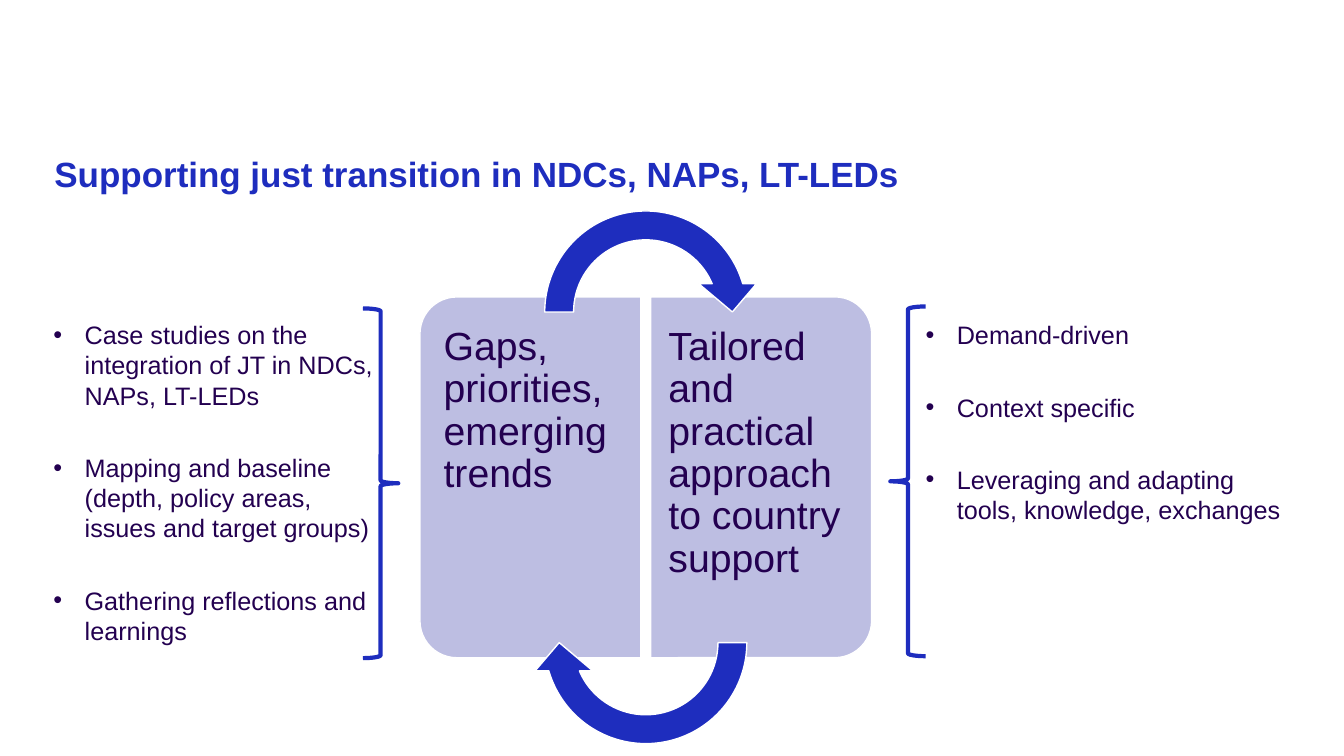
from lxml import etree
from pptx import Presentation
from pptx.dml.color import RGBColor
from pptx.enum.shapes import MSO_SHAPE
from pptx.enum.text import MSO_ANCHOR, PP_ALIGN
from pptx.oxml.ns import qn
from pptx.util import Pt

PANEL = MSO_SHAPE.ROUND_2_SAME_RECTANGLE
ARROW = MSO_SHAPE.CIRCULAR_ARROW
BRACE = MSO_SHAPE.RIGHT_BRACE
TOP = MSO_ANCHOR.TOP
LEFT = PP_ALIGN.LEFT

BLUE = RGBColor(0x1E, 0x2D, 0xBE)
LILAC = RGBColor(0xBD, 0xBE, 0xE2)
PLUM = RGBColor(0x23, 0x00, 0x50)
WHITE = RGBColor(0xFF, 0xFF, 0xFF)
PX = 9144  # 100 px to the inch

deck = Presentation()
deck.slide_width, deck.slide_height = 1333 * PX, 750 * PX
slide = deck.slides.add_slide(deck.slide_layouts[6])


def add_text(box, lines, size, color, pads=(0, 0, 0, 0), bold=False, space=None, bullet=False):
    area = slide.shapes.add_textbox(*[n * PX for n in box])
    frame = area.text_frame
    frame.word_wrap = True
    frame.vertical_anchor = TOP
    frame.margin_left, frame.margin_top, frame.margin_right, frame.margin_bottom = [
        n * PX for n in pads]
    for i, line in enumerate(lines):
        para = frame.paragraphs[0] if i == 0 else frame.add_paragraph()
        para.alignment = LEFT
        if space:
            para.line_spacing = space
        if bullet:
            para.space_before = Pt(24 if i else 0)
            para.space_after = Pt(6)
            props = para._p.get_or_add_pPr()
            props.set("marL", str(31 * PX))
            props.set("indent", str(-31 * PX))
            etree.SubElement(props, qn("a:buFont")).set("typeface", "Arial")
            etree.SubElement(props, qn("a:buChar")).set("char", "•")
        run = para.add_run()
        run.text = line
        run.font.name, run.font.size, run.font.bold = "Arial", Pt(size), bold
        run.font.color.rgb = color


def add_shape(kind, box, turn, fill, line, width, adjust=()):
    shape = slide.shapes.add_shape(kind, *[n * PX for n in box])
    shape.shadow.inherit = False
    shape.rotation = turn
    if fill is None:
        shape.fill.background()
    else:
        shape.fill.solid()
        shape.fill.fore_color.rgb = fill
    shape.line.color.rgb = line
    shape.line.width = Pt(width)
    for i, value in enumerate(adjust):
        shape.adjustments[i] = value


# Title
add_text((54, 156, 1226, 79), ["Supporting just transition in NDCs, NAPs, LT-LEDs"],
         25, BLUE, bold=True, space=0.9)

# Two panels: left edge of shape, turn, left edge of text, insets, wording
panels = [
    (347, 270, 428, (12, 19, 17, 19), "Gaps, priorities, emerging trends"),
    (576, 90, 646, (17, 19, 12, 19), "Tailored and practical approach to country support"),
]
for left, turn, start, pads, words in panels:
    add_shape(PANEL, (left, 364, 358, 219), turn, LILAC, WHITE, 1, (0.167, 0))
    add_text((start, 305, 208, 336), [words], 28, PLUM, pads, space=0.9)

# Cycle arrows above and below
for top, turn in [(195, 0), (523, 180)]:
    add_shape(ARROW, (526, top, 229, 229), turn, BLUE, WHITE, 1,
              (0.125, 11.423, 204.577, 108, 0.125))

# Side lists
lists = [
    (53, 322, ["Case studies on the integration of JT in NDCs, NAPs, LT-LEDs",
               "Mapping and baseline (depth, policy areas, issues and target groups)",
               "Gathering reflections and learnings"]),
    (918, 361, ["Demand-driven", "Context specific",
                "Leveraging and adapting tools, knowledge, exchanges"]),
]
for left, width, lines in lists:
    add_text((left, 317, width, 381), lines, 18, PLUM, bullet=True)

# Braces
for left, top, turn in [(360, 306, 0), (883, 304, 180)]:
    add_shape(BRACE, (left, top, 35, 347), turn, None, BLUE, 3)

deck.save("out.pptx")
